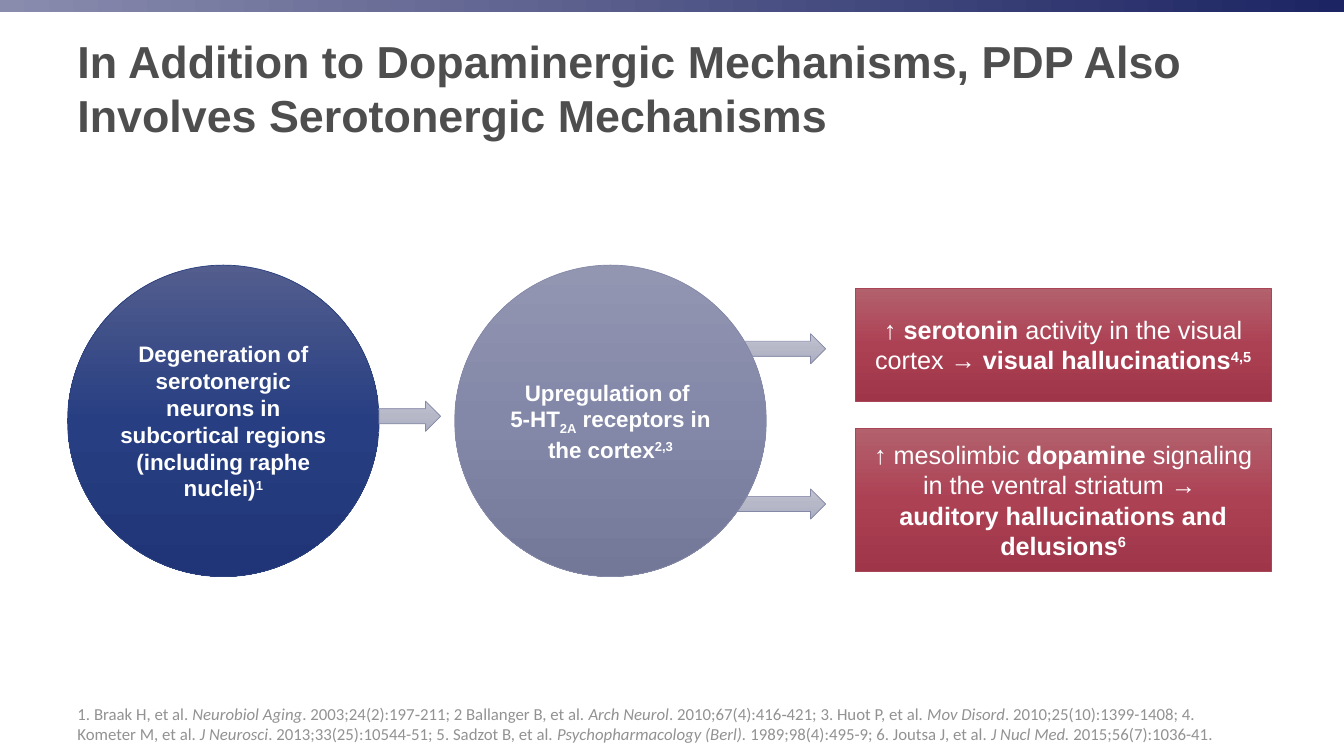
from lxml.etree import SubElement
from pptx import Presentation
from pptx.dml.color import RGBColor
from pptx.enum.shapes import MSO_SHAPE
from pptx.enum.text import MSO_ANCHOR, PP_ALIGN
from pptx.oxml.ns import qn
from pptx.util import Inches, Pt

WIDTH, HEIGHT = 13.33, 7.5
MARGIN = 0.67
TEXT_WIDTH = 11.75

WHITE = RGBColor(0xFF, 0xFF, 0xFF)
TITLE_GRAY = RGBColor(0x4D, 0x4E, 0x4D)
REFERENCE_GRAY = RGBColor(0x92, 0x92, 0x92)
NAVY_LINE = RGBColor(0x2B, 0x40, 0x7E)
LAVENDER_LINE = RGBColor(0x85, 0x89, 0xA7)
RED_LINE = RGBColor(0xA8, 0x46, 0x57)
BANNER = (RGBColor(0x89, 0x8C, 0xAD), RGBColor(0x1C, 0x24, 0x63))
NAVY = (RGBColor(0x53, 0x5E, 0x8E), RGBColor(0x27, 0x3E, 0x82), RGBColor(0x1F, 0x35, 0x77))
LAVENDER = (RGBColor(0x93, 0x96, 0xB1), RGBColor(0x83, 0x88, 0xA9), RGBColor(0x73, 0x77, 0x98))
RED = (RGBColor(0xB3, 0x61, 0x6D), RGBColor(0xAD, 0x41, 0x54), RGBColor(0x9E, 0x35, 0x48))
PALE = (RGBColor(0xC1, 0xC3, 0xD1), RGBColor(0xB6, 0xB8, 0xC8), RGBColor(0xAA, 0xAD, 0xC1))

BASELINES = {"superscript": "30000", "subscript": "-25000"}

TITLE = "In Addition to Dopaminergic Mechanisms, PDP Also Involves Serotonergic Mechanisms"
DEGENERATION = [[
    ("Degeneration of serotonergic neurons in subcortical regions (including raphe nuclei)", "bold"),
    ("1", "bold superscript"),
]]
UPREGULATION = [
    [("Upregulation of ", "bold")],
    [("5-HT", "bold"), ("2A", "bold subscript"),
     (" receptors in the cortex", "bold"), ("2,3", "bold superscript")],
]
SEROTONIN = [[
    ("↑ ", ""), ("serotonin", "bold"), (" activity in the visual cortex → ", ""),
    ("visual hallucinations", "bold"), ("4,5", "bold superscript"),
]]
DOPAMINE = [[
    ("↑ mesolimbic ", ""), ("dopamine ", "bold"), ("signaling in the ventral striatum → ", ""),
    ("\n", ""), ("auditory hallucinations and delusions", "bold"), ("6", "bold superscript"),
]]
REFERENCES = [[
    ("1. Braak H, et al. ", ""), ("Neurobiol Aging", "italic"),
    (". 2003;24(2):197‐211; 2 Ballanger B, et al. ", ""), ("Arch Neurol", "italic"),
    (". 2010;67(4):416‐421; 3. Huot P, et al. ", ""), ("Mov Disord", "italic"),
    (". 2010;25(10):1399-1408; 4. Kometer M, et al. ", ""), ("J Neurosci", "italic"),
    (". 2013;33(25):10544-51; 5. Sadzot B, et al. ", ""),
    ("Psychopharmacology (Berl). ", "italic"),
    ("1989;98(4):495-9; 6. Joutsa J, et al. ", ""), ("J Nucl Med. ", "italic"),
    ("2015;56(7):1036-41.", ""),
]]


def write_text(shape, paragraphs, size, color, font="Arial",
               anchor=MSO_ANCHOR.MIDDLE, alignment=PP_ALIGN.CENTER):
    """Fill a shape with paragraphs, each a list of (text, style words) runs."""
    frame = shape.text_frame
    frame.word_wrap = True
    frame.vertical_anchor = anchor
    for index, parts in enumerate(paragraphs):
        paragraph = frame.add_paragraph() if index else frame.paragraphs[0]
        paragraph.alignment = alignment
        for text, style in parts:
            if text == "\n":
                paragraph.add_line_break()
                continue
            run = paragraph.add_run()
            run.text = text
            run.font.name = font
            run.font.size = Pt(size)
            run.font.color.rgb = color
            words = style.split()
            run.font.bold = "bold" in words
            run.font.italic = "italic" in words
            for word in words:
                if word in BASELINES:
                    run.font._element.set("baseline", BASELINES[word])


def add_gradient_shape(slide, kind, box, colors, line_color=None, angle=270):
    """Add a shape whose gradient stops are evenly spaced; 270 runs downwards."""
    shape = slide.shapes.add_shape(kind, *map(Inches, box))
    shape.shadow.inherit = False
    shape.fill.gradient()
    shape.fill.gradient_angle = angle
    stops = shape._element.spPr.find(qn("a:gradFill")).find(qn("a:gsLst"))
    stops.clear()
    for index, color in enumerate(colors):
        stop = SubElement(stops, qn("a:gs"), pos=str(100000 * index // (len(colors) - 1)))
        SubElement(stop, qn("a:srgbClr"), val=str(color))
    if line_color is None:
        shape.line.fill.background()
    else:
        shape.line.color.rgb = line_color
        shape.line.width = Pt(0.5)
    return shape


def add_banner(slide, box):
    add_gradient_shape(slide, MSO_SHAPE.RECTANGLE, box, BANNER, angle=0)


def add_title(slide, box):
    title = slide.shapes.add_textbox(*map(Inches, box))
    write_text(title, [[(TITLE, "bold")]], 32, TITLE_GRAY, alignment=PP_ALIGN.LEFT)


def add_references(slide, box):
    references = slide.shapes.add_textbox(*map(Inches, box))
    write_text(references, REFERENCES, 12, REFERENCE_GRAY, "Calibri",
               MSO_ANCHOR.BOTTOM, PP_ALIGN.LEFT)


def add_circle(slide, box, colors, line_color, paragraphs):
    circle = add_gradient_shape(slide, MSO_SHAPE.OVAL, box, colors, line_color)
    frame = circle.text_frame
    frame.margin_left = frame.margin_right = Inches(0.05)
    frame.margin_top = frame.margin_bottom = Inches(0.02)
    write_text(circle, paragraphs, 16, WHITE)


def add_outcome(slide, box, paragraphs):
    outcome = add_gradient_shape(slide, MSO_SHAPE.ROUNDED_RECTANGLE, box, RED, RED_LINE)
    outcome.adjustments[0] = 0
    write_text(outcome, paragraphs, 18, WHITE)


def add_mechanism_flow(slide, box):
    """Two circles as tall as the box, leading by arrows to two outcomes."""
    left, top, width, diameter = box
    second_left = left + 3.84
    outcome_width = 4.13
    outcome_left = left + width - outcome_width
    arrow_height = 0.3

    add_circle(slide, (left, top, diameter, diameter), NAVY, NAVY_LINE, DEGENERATION)
    for offset, height, paragraphs in ((0.23, 1.12, SEROTONIN), (1.62, 1.42, DOPAMINE)):
        add_outcome(slide, (outcome_left, top + offset, outcome_width, height), paragraphs)

    fork_left = outcome_left - 1.35
    for arrow_left, offset, length in ((left + diameter, 1.35, 0.61),
                                       (fork_left, 0.68, 1.06), (fork_left, 2.22, 1.06)):
        add_gradient_shape(slide, MSO_SHAPE.RIGHT_ARROW,
                           (arrow_left, top + offset, length, arrow_height),
                           PALE, LAVENDER_LINE)

    # The second circle covers the tails of the forked arrows.
    add_circle(slide, (second_left, top, diameter, diameter),
               LAVENDER, LAVENDER_LINE, UPREGULATION)


def main():
    presentation = Presentation()
    presentation.slide_width = Inches(WIDTH)
    presentation.slide_height = Inches(HEIGHT)
    slide = presentation.slides.add_slide(presentation.slide_layouts[6])
    add_banner(slide, (0, 0, WIDTH, 0.12))
    add_title(slide, (MARGIN, 0.22, TEXT_WIDTH, 1.3))
    add_references(slide, (MARGIN, 6.95, TEXT_WIDTH, 0.48))
    add_mechanism_flow(slide, (MARGIN, 2.63, 11.94, 3.09))
    presentation.save("out.pptx")


if __name__ == "__main__":
    main()
